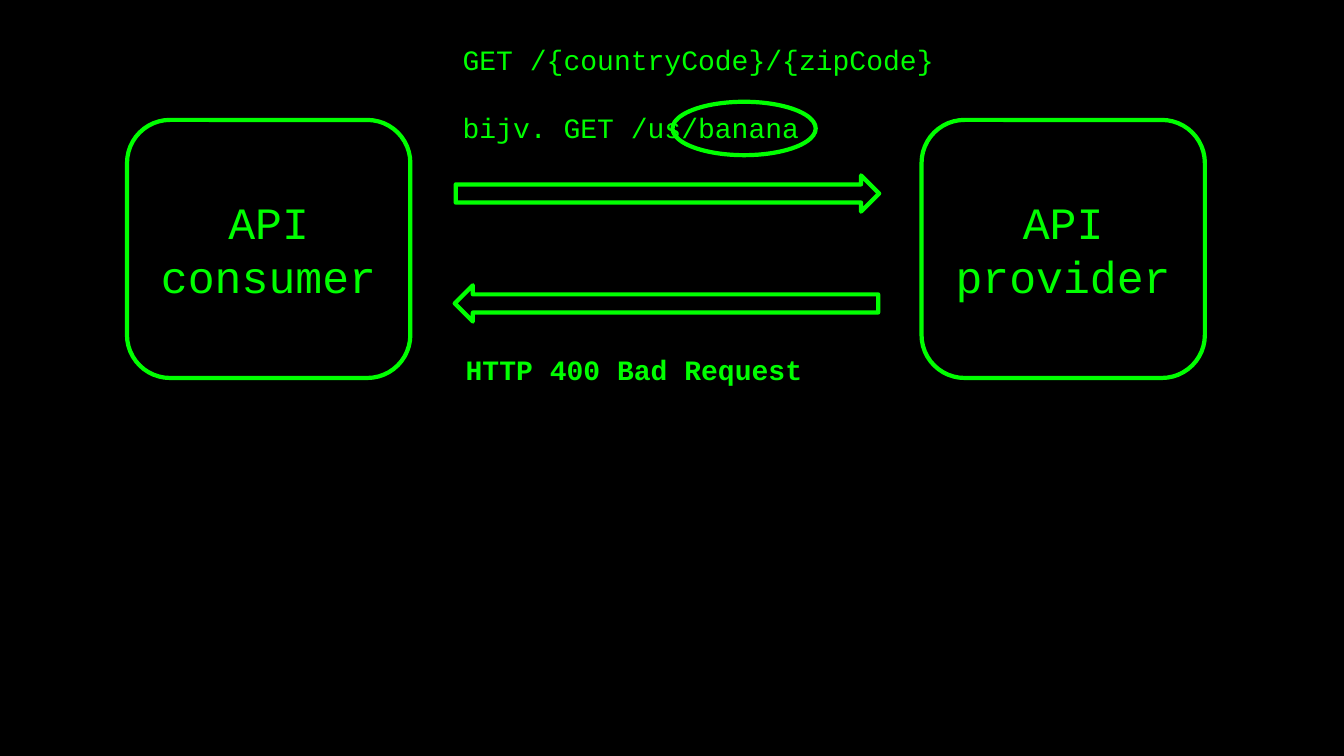
from pptx import Presentation
from pptx.dml.color import RGBColor
from pptx.enum.shapes import MSO_SHAPE
from pptx.enum.text import MSO_ANCHOR, PP_ALIGN
from pptx.util import Inches, Pt

BLACK = RGBColor(0x00, 0x00, 0x00)
GREEN = RGBColor(0x00, 0xFF, 0x00)
FONT = "Courier New"

presentation = Presentation()
presentation.slide_width = Inches(13.33)
presentation.slide_height = Inches(7.5)
slide = presentation.slides.add_slide(presentation.slide_layouts[6])
slide.background.fill.solid()
slide.background.fill.fore_color.rgb = BLACK


def add_outline(kind, left, top, width, height):
    shape = slide.shapes.add_shape(
        kind, Inches(left), Inches(top), Inches(width), Inches(height))
    shape.shadow.inherit = False
    shape.fill.background()
    shape.line.color.rgb = GREEN
    shape.line.width = Pt(3)
    return shape


def format_text(paragraph, size, bold=False):
    for run in paragraph.runs:
        run.font.name = FONT
        run.font.size = Pt(size)
        run.font.bold = bold
        run.font.color.rgb = GREEN


# The two parties
for left, label in [(1.26, "API consumer"), (9.14, "API provider")]:
    party = add_outline(MSO_SHAPE.ROUNDED_RECTANGLE, left, 1.19, 2.81, 2.56)
    party.text_frame.text = label
    party.text_frame.word_wrap = True
    party.text_frame.vertical_anchor = MSO_ANCHOR.MIDDLE
    paragraph = party.text_frame.paragraphs[0]
    paragraph.alignment = PP_ALIGN.CENTER
    format_text(paragraph, 32)

# Request arrow to the right, response arrow to the left
for left, top, rotation in [(4.52, 1.74, 0), (4.51, 2.83, 180)]:
    arrow = add_outline(MSO_SHAPE.RIGHT_ARROW, left, top, 4.2, 0.36)
    arrow.rotation = rotation

# Request and response messages
messages = [
    (4.49, 0.37, 5.06, 1.11, False,
     ["GET /{countryCode}/{zipCode}", "bijv. GET /us/banana"]),
    (4.52, 3.45, 6.19, 0.44, True, ["HTTP 400 Bad Request"]),
]
for left, top, width, height, bold, lines in messages:
    message = slide.shapes.add_textbox(
        Inches(left), Inches(top), Inches(width), Inches(height))
    message.text_frame.word_wrap = True
    message.text_frame.text = "\n".join(lines)
    for paragraph in message.text_frame.paragraphs:
        format_text(paragraph, 20, bold)
    for paragraph in message.text_frame.paragraphs[1:]:
        paragraph.space_before = Pt(25)

# Ring around the invalid zip code
add_outline(MSO_SHAPE.OVAL, 6.67, 1.01, 1.42, 0.53)

presentation.save("out.pptx")
